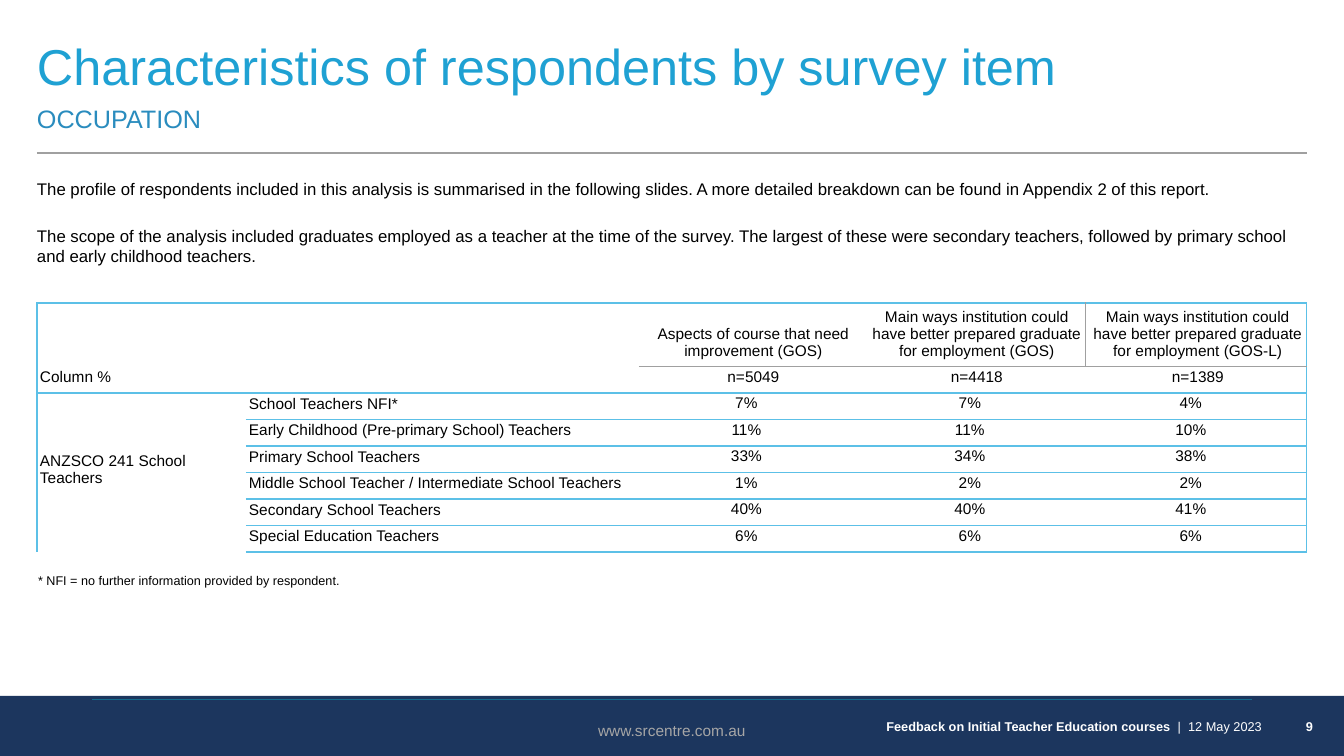
from lxml.etree import SubElement
from pptx import Presentation
from pptx.dml.color import RGBColor
from pptx.enum.shapes import MSO_CONNECTOR, MSO_SHAPE
from pptx.enum.text import MSO_ANCHOR, PP_ALIGN
from pptx.oxml.ns import qn
from pptx.util import Pt

# Content
TITLE = "Characteristics of respondents by survey item"
TOPIC = "OCCUPATION"
INTRO = [
    "The profile of respondents included in this analysis is summarised in the following slides. "
    "A more detailed breakdown can be found in Appendix 2 of this report.",
    "The scope of the analysis included graduates employed as a teacher at the time of the survey. "
    "The largest of these were secondary teachers, followed by primary school and early childhood teachers.",
]
CORNER = "Column %"
GROUP = "ANZSCO 241 School Teachers"
ITEMS = [
    ("Aspects of course that need improvement (GOS)", "n=5049"),
    ("Main ways institution could have better prepared graduate for employment (GOS)", "n=4418"),
    ("Main ways institution could have better prepared graduate for employment (GOS-L)", "n=1389"),
]
SHARES = [
    ("School Teachers NFI*", 7, 7, 4),
    ("Early Childhood (Pre-primary School) Teachers", 11, 11, 10),
    ("Primary School Teachers", 33, 34, 38),
    ("Middle School Teacher / Intermediate School Teachers", 1, 2, 2),
    ("Secondary School Teachers", 40, 40, 41),
    ("Special Education Teachers", 6, 6, 6),
]
NOTE = "* NFI = no further information provided by respondent."
REPORT, DATE = "Feedback on Initial Teacher Education courses", "  |  12 May 2023"
SITE = "www.srcentre.com.au"
PAGE = "9"

# Theme
THEME = {
    "font": "Arial",
    "title": (36, "1FA1D3"), "topic": (18, "2A8CBE"), "body": (12, "000000"),
    "cell": (11, "000000"), "note": (9, "000000"), "foot": (9.1, "FFFFFF"), "site": (11, "A6A6A6"),
    "band": "1C365E", "seam": "156B8D", "grid": "5CC0E7", "grey": "A0A0A0", "paper": "FFFFFF",
}
LEFT, CENTER, RIGHT = PP_ALIGN.LEFT, PP_ALIGN.CENTER, PP_ALIGN.RIGHT
TOP, MID, LOW = MSO_ANCHOR.TOP, MSO_ANCHOR.MIDDLE, MSO_ANCHOR.BOTTOM
SIDES = ("margin_left", "margin_top", "margin_right", "margin_bottom")
EDGE, WIDE = 37, 1270
COLS = [209, 393, 226, 221, 221]
ROWS = [60] + [25] * 7
PAD = (10, 5, 10, 5)


def px(num):
    return round(num * 914400 / 100.8)


def assign(obj, **vals):
    for key, val in vals.items():
        setattr(obj, key, val)


def write(para, runs, style, align):
    para.alignment = align
    size, color = THEME[style]
    for text, bold in runs:
        run = para.add_run()
        run.text = text
        assign(run.font, name=THEME["font"], size=Pt(size), bold=bold)
        run.font.color.rgb = RGBColor.from_string(color)


def label(slide, box, paras, style, align=LEFT, anchor=TOP, pad=PAD, gap=0):
    frame = slide.shapes.add_textbox(*map(px, box)).text_frame
    assign(frame, word_wrap=True, vertical_anchor=anchor, **dict(zip(SIDES, map(px, pad))))
    for i, runs in enumerate(paras):
        para = frame.add_paragraph() if i else frame.paragraphs[0]
        if i:
            para.space_before = Pt(gap)
        write(para, runs, style, align)


def rule(slide, x, y, wide, color):
    line = slide.shapes.add_connector(MSO_CONNECTOR.STRAIGHT, px(x), px(y), px(x + wide), px(y))
    line.line.width = Pt(0.75)
    line.line.color.rgb = RGBColor.from_string(THEME[color])
    SubElement(line._element.spPr, qn("a:effectLst"))


def across(row, col):
    """Colour of the horizontal edge above a row."""
    if row == 1:
        return "grey" if col > 1 else None
    return "grid" if row in (0, 2, len(ROWS)) or col else None


def down(row, col):
    """Colour of the vertical edge left of a column."""
    if col in (0, len(COLS)):
        return "grid"
    return "grey" if (row, col) == (0, 4) else None


def border(cell, row, col):
    edges = {"L": down(row, col), "R": down(row, col + 1),
             "T": across(row, col), "B": across(row + 1, col)}
    props = cell._tc.get_or_add_tcPr()
    for side, color in edges.items():
        line = SubElement(props, qn("a:ln" + side), w=str(Pt(1)))
        if color:
            SubElement(SubElement(line, qn("a:solidFill")), qn("a:srgbClr"), val=THEME[color])
        else:
            SubElement(line, qn("a:noFill"))


def fill(cell, text, align, anchor, right=0):
    assign(cell, vertical_anchor=anchor, **dict(zip(SIDES, map(px, (3, 1, right, 7)))))
    write(cell.text_frame.paragraphs[0], [(text, False)], "cell", align)


def chart(slide):
    table = slide.shapes.add_table(len(ROWS), len(COLS), px(EDGE), px(303), px(WIDE), px(sum(ROWS))).table
    assign(table, first_row=False, horz_banding=False)
    for col, wide in zip(table.columns, COLS):
        col.width = px(wide)
    for row, high in zip(table.rows, ROWS):
        row.height = px(high)
    for r in range(len(ROWS)):
        for c in range(len(COLS)):
            cell = table.cell(r, c)
            border(cell, r, c)
            cell.fill.solid()
            cell.fill.fore_color.rgb = RGBColor.from_string(THEME["paper"])
            # Small type keeps blank merged cells from stretching the rows
            cell.text_frame.paragraphs[0].font.size = Pt(THEME["cell"][0])
    table.cell(0, 0).merge(table.cell(1, 1))
    table.cell(2, 0).merge(table.cell(len(ROWS) - 1, 0))
    fill(table.cell(0, 0), CORNER, LEFT, LOW)
    fill(table.cell(2, 0), GROUP, LEFT, MID)
    for c, heads in enumerate(ITEMS, 2):
        for r, text in enumerate(heads):
            fill(table.cell(r, c), text, CENTER, LOW)
    for r, (name, *nums) in enumerate(SHARES, 2):
        fill(table.cell(r, 1), name, LEFT, LOW)
        for c, num in enumerate(nums, 2):
            fill(table.cell(r, c), f"{num}%", CENTER, MID, 14)


def main():
    deck = Presentation()
    assign(deck, slide_width=px(1344), slide_height=px(756))
    slide = deck.slides.add_slide(deck.slide_layouts[6])

    # Footer
    band = slide.shapes.add_shape(MSO_SHAPE.RECTANGLE, *map(px, (0, 696, 1344, 60)))
    band.shadow.inherit = False
    band.fill.solid()
    band.fill.fore_color.rgb = RGBColor.from_string(THEME["band"])
    band.line.fill.background()
    label(slide, (458, 714, 818, 25), [[(REPORT, True), (DATE, False)]], "foot", RIGHT, MID, (10, 5, 14, 5))
    label(slide, (1276, 701, 67, 50), [[(PAGE, True)]], "foot", CENTER, MID, (0, 0, 0, 0))
    label(slide, (501, 716, 342, 29), [[(SITE, False)]], "site", CENTER)
    rule(slide, 92, 700, 1160, "seam")

    # Heading and introduction
    rule(slide, EDGE, 153, WIDE, "grey")
    label(slide, (EDGE, 30, WIDE, 70), [[(TITLE, False)]], "title", pad=(0, 5, 0, 0))
    label(slide, (EDGE, 100, WIDE, 52), [[(TOPIC, False)]], "topic", pad=(0, 3, 0, 0))
    label(slide, (EDGE, 178, WIDE, 110), [[(text, False)] for text in INTRO], "body", pad=(0, 1, 0, 0), gap=19)

    # Table and footnote
    chart(slide)
    label(slide, (28, 568, 593, 25), [[(NOTE, False)]], "note")
    deck.save("out.pptx")


if __name__ == "__main__":
    main()
